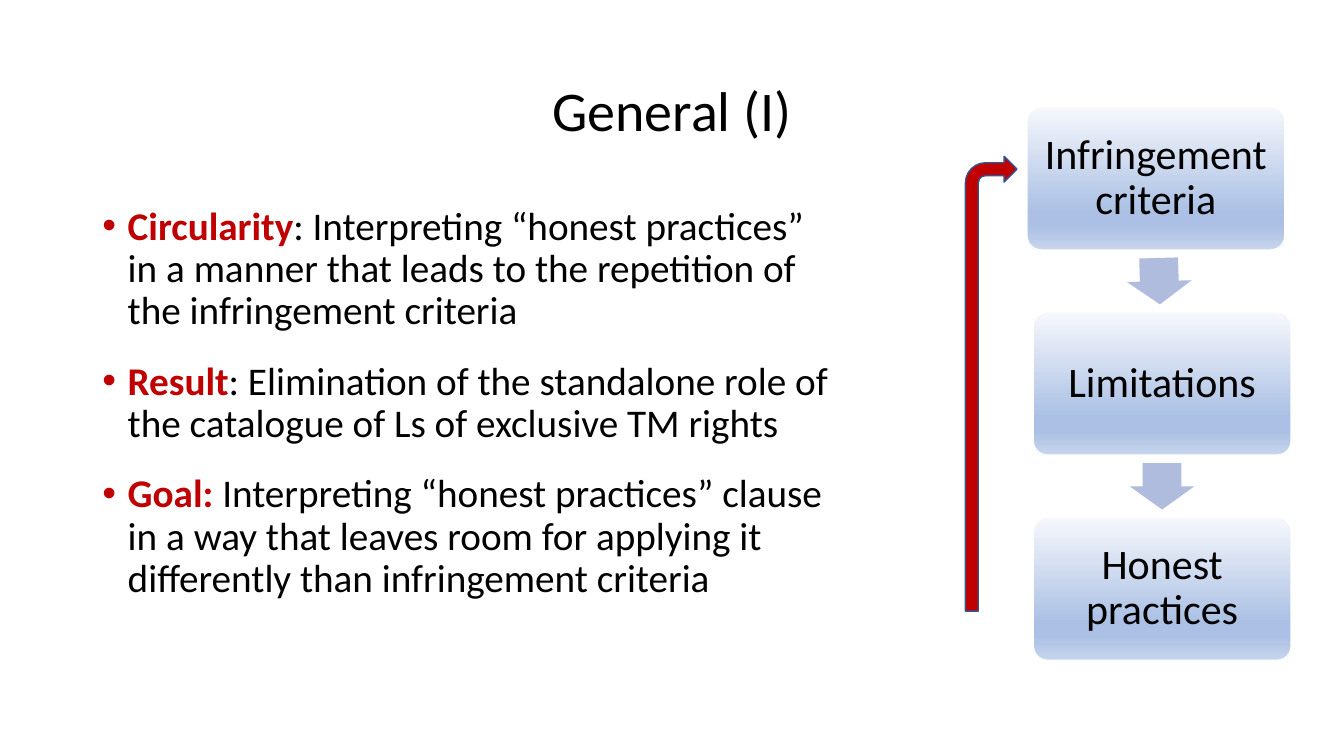
from copy import deepcopy

from lxml.etree import SubElement
from pptx import Presentation
from pptx.dml.color import RGBColor
from pptx.enum.shapes import MSO_SHAPE as Shape
from pptx.enum.text import MSO_ANCHOR as Anchor, PP_ALIGN as Align
from pptx.oxml.ns import qn
from pptx.util import Cm, Pt

BLACK = RGBColor(0x00, 0x00, 0x00)
WHITE = RGBColor(0xFF, 0xFF, 0xFF)
RED = RGBColor(0xC0, 0x00, 0x00)
NAVY = RGBColor(0x32, 0x54, 0x91)
LAVENDER = RGBColor(0xB0, 0xBC, 0xDE)
PALE = RGBColor(0xF6, 0xF8, 0xFC)
BLUE = RGBColor(0xAB, 0xC0, 0xE4)
LIGHT_BLUE = RGBColor(0xC7, 0xD5, 0xED)

BOX_GRADIENT = [(0, PALE), (0.74, BLUE), (0.83, BLUE), (1, LIGHT_BLUE)]
STEP_HEIGHT = 5.17
STEPS = [("Infringement criteria", 25.88), ("Limitations", 26.04), ("Honest practices", 26.04)]
DOWN_ARROWS = [(28.63, 88.4), (28.7, 90)]
POINTS = [
    ("Circularity", ": Interpreting “honest practices” in a manner that leads to "
                    "the repetition of the infringement criteria"),
    ("Result", ": Elimination of the standalone role of the catalogue of Ls of "
               "exclusive TM rights"),
    ("Goal:", " Interpreting “honest practices” clause in a way that leaves room "
              "for applying it differently than infringement criteria"),
]


def add_span(para, text, size, color=BLACK, bold=False):
    para.line_spacing = 0.9
    span = para.add_run()
    span.text = text
    span.font.name = "Calibri"
    span.font.size = Pt(size)
    span.font.bold = bold
    span.font.color.rgb = color


def add_arrow(kind, left, top, width, height, color):
    arrow = page.shapes.add_shape(kind, Cm(left), Cm(top), Cm(width), Cm(height))
    arrow.shadow.inherit = False
    arrow.fill.solid()
    arrow.fill.fore_color.rgb = color
    return arrow


deck = Presentation()
deck.slide_width, deck.slide_height = Cm(33.87), Cm(19.05)
page = deck.slides.add_slide(deck.slide_layouts[6])

title = page.shapes.add_textbox(Cm(2.33), Cm(1.01), Cm(29.21), Cm(3.68)).text_frame
title.word_wrap = True
title.vertical_anchor = Anchor.MIDDLE
title.paragraphs[0].alignment = Align.CENTER
add_span(title.paragraphs[0], "General (I)", 40)

body = page.shapes.add_textbox(Cm(2.33), Cm(5.07), Cm(19), Cm(12.09)).text_frame
body.word_wrap = True
for index, (keyword, explanation) in enumerate(POINTS):
    para = body.add_paragraph() if index else body.paragraphs[0]
    para.space_before = para.space_after = Pt(10)
    add_span(para, keyword, 28, RED, True)
    add_span(para, explanation, 28)
    properties = para._p.get_or_add_pPr()
    properties.set("marL", str(Cm(0.64)))
    properties.set("indent", str(Cm(-0.64)))
    SubElement(properties, qn("a:buFont")).set("typeface", "Arial")
    SubElement(properties, qn("a:buChar")).set("char", "•")

for index, (label, left) in enumerate(STEPS):
    box = page.shapes.add_shape(Shape.ROUNDED_RECTANGLE, Cm(left),
                                Cm(2.69 + index * STEP_HEIGHT), Cm(6.5), Cm(3.61))
    box.adjustments[0] = 0.1
    box.shadow.inherit = False
    box.line.color.rgb = WHITE
    box.line.width = Pt(1)
    box.fill.gradient()
    box.fill.gradient_angle = 270
    stop_list = box._element.spPr.find(qn("a:gradFill")).find(qn("a:gsLst"))
    while len(stop_list) < len(BOX_GRADIENT):
        stop_list.append(deepcopy(stop_list[0]))
    for stop, (position, color) in zip(box.fill.gradient_stops, BOX_GRADIENT):
        stop.position = position
        stop.color.rgb = color
    frame = box.text_frame
    frame.word_wrap = True
    frame.vertical_anchor = Anchor.MIDDLE
    frame.margin_left = frame.margin_right = Cm(0.3)
    frame.margin_top = frame.margin_bottom = Cm(0.3)
    frame.paragraphs[0].alignment = Align.CENTER
    add_span(frame.paragraphs[0], label, 30)

for index, (left, angle) in enumerate(DOWN_ARROWS):
    down_arrow = add_arrow(Shape.RIGHT_ARROW, left, 6.27 + index * STEP_HEIGHT,
                           1.17, 1.63, LAVENDER)
    down_arrow.adjustments[0] = 0.6
    down_arrow.rotation = angle
    down_arrow.line.fill.background()

return_arrow = add_arrow(Shape.BENT_ARROW, 24.33, 3.94, 1.3, 11.46, RED)
return_arrow.adjustments[3] = 0.39
return_arrow.line.color.rgb = NAVY
return_arrow.line.width = Pt(1)

deck.save("out.pptx")
